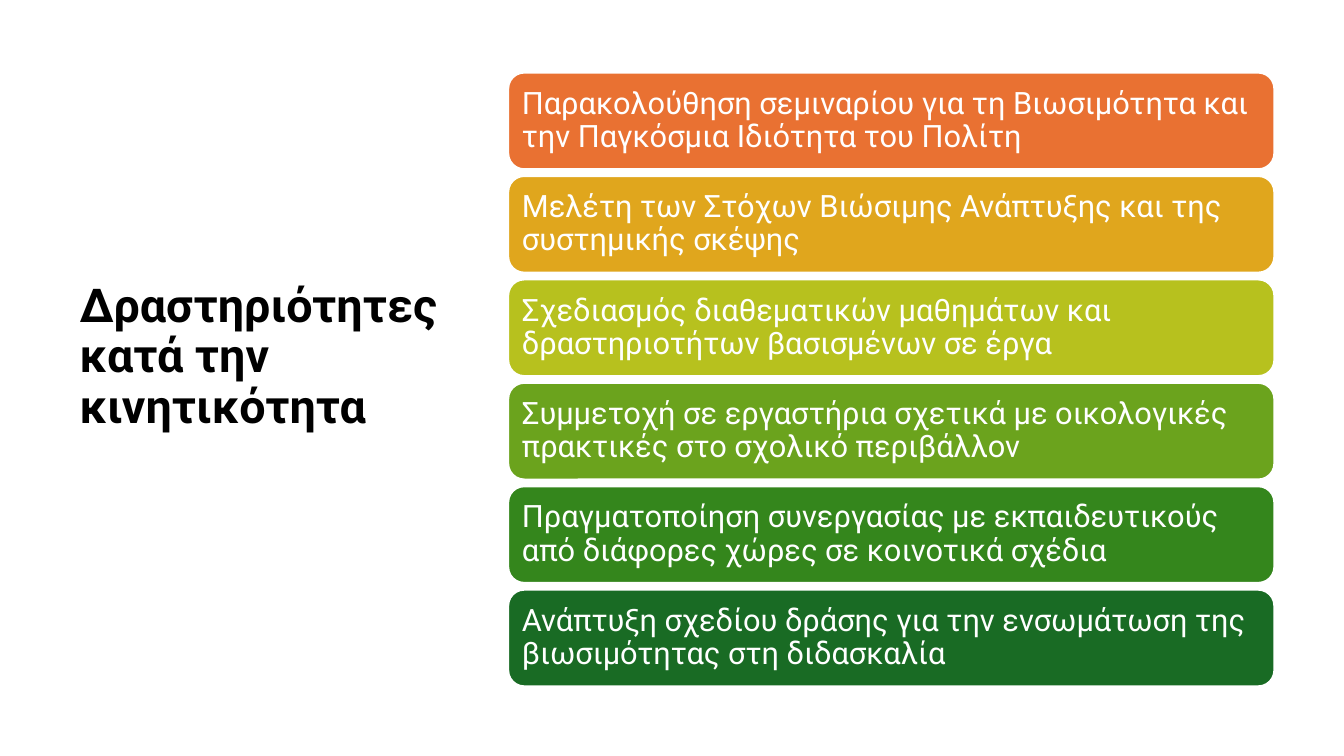
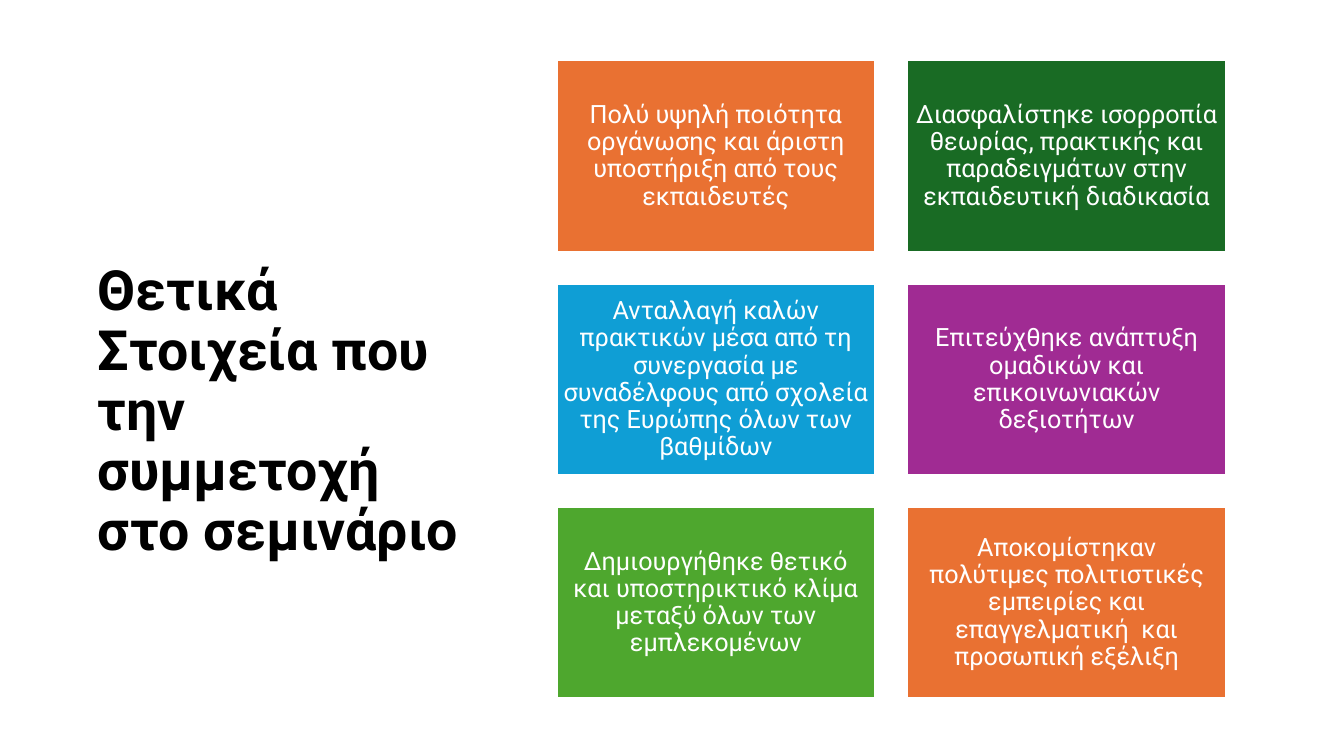
import pptx
import pptx.util
import pptx.dml.color
import pptx.enum.shapes
import pptx.enum.text

Inches = pptx.util.Inches
Pt = pptx.util.Pt
RGBColor = pptx.dml.color.RGBColor
MSO_SHAPE = pptx.enum.shapes.MSO_SHAPE
MSO_ANCHOR = pptx.enum.text.MSO_ANCHOR
PP_ALIGN = pptx.enum.text.PP_ALIGN

# Shared style
FONT = "Roboto"
BLACK = RGBColor(0x00, 0x00, 0x00)
WHITE = RGBColor(0xFF, 0xFF, 0xFF)
ORANGE = RGBColor(0xE9, 0x71, 0x32)
AMBER = RGBColor(0xE0, 0xA6, 0x1D)
LIME = RGBColor(0xB7, 0xC1, 0x1E)
OLIVE = RGBColor(0x6B, 0xA3, 0x1D)
GREEN = RGBColor(0x34, 0x86, 0x1C)
DARK_GREEN = RGBColor(0x19, 0x6B, 0x24)
BLUE = RGBColor(0x0F, 0x9E, 0xD5)
PURPLE = RGBColor(0xA0, 0x2B, 0x93)
LIGHT_GREEN = RGBColor(0x4E, 0xA7, 0x2E)

TITLE_FONT = {"name": FONT, "bold": True, "color": BLACK}
CARD_FONT = {"name": FONT, "bold": False, "color": WHITE}


def write_text(shape, text, font_format, size, anchor, alignment, inset):
    frame = shape.text_frame
    frame_format = {"word_wrap": True, "vertical_anchor": anchor}
    for side in ("left", "right", "top", "bottom"):
        frame_format["margin_" + side] = Inches(inset)
    for name, value in frame_format.items():
        setattr(frame, name, value)
    paragraph = frame.paragraphs[0]
    paragraph.alignment = alignment
    paragraph.line_spacing = 0.9
    run = paragraph.add_run()
    run.text = text
    run.font.size = Pt(size)
    for name, value in font_format.items():
        if name == "color":
            run.font.color.rgb = value
        else:
            setattr(run.font, name, value)


# Content: title, card grid and cards of each slide
SLIDES = [
    {
        "title": "Δραστηριότητες κατά την κινητικότητα",
        "title_box": (0.69, 2.75, 3.82, 2.2),
        "title_size": 33.3,
        "preset": MSO_SHAPE.ROUNDED_RECTANGLE,
        "columns": 1,
        "first": (5.04, 0.72),
        "last": (5.04, 5.85),
        "card_size": (7.6, 0.96),
        "text_size": 22,
        "alignment": PP_ALIGN.LEFT,
        "inset": 0.09,
        "cards": [
            (ORANGE, "Παρακολούθηση σεμιναρίου για τη Βιωσιμότητα και την Παγκόσμια Ιδιότητα του Πολίτη"),
            (AMBER, "Μελέτη των Στόχων Βιώσιμης Ανάπτυξης και της συστημικής σκέψης"),
            (LIME, "Σχεδιασμός διαθεματικών μαθημάτων και δραστηριοτήτων βασισμένων σε έργα"),
            (OLIVE, "Συμμετοχή σε εργαστήρια σχετικά με οικολογικές πρακτικές στο σχολικό περιβάλλον"),
            (GREEN, "Πραγματοποίηση συνεργασίας με εκπαιδευτικούς από διάφορες χώρες σε κοινοτικά σχέδια"),
            (DARK_GREEN, "Ανάπτυξη σχεδίου δράσης για την ενσωμάτωση της βιωσιμότητας στη διδασκαλία"),
        ],
    },
    {
        "title": "Θετικά Στοιχεία που την συμμετοχή στο σεμινάριο",
        "title_box": (0.87, 2.56, 3.82, 2.64),
        "title_size": 39.6,
        "preset": MSO_SHAPE.RECTANGLE,
        "columns": 2,
        "first": (5.52, 0.6),
        "last": (9, 5.03),
        "card_size": (3.16, 1.9),
        "text_size": 18,
        "alignment": PP_ALIGN.CENTER,
        "inset": 0.07,
        "cards": [
            (ORANGE, "Πολύ υψηλή ποιότητα οργάνωσης και άριστη υποστήριξη από τους εκπαιδευτές"),
            (DARK_GREEN, "Διασφαλίστηκε ισορροπία θεωρίας, πρακτικής και παραδειγμάτων στην εκπαιδευτική διαδικασία"),
            (BLUE, "Ανταλλαγή καλών πρακτικών μέσα από τη συνεργασία με συναδέλφους από σχολεία της Ευρώπης όλων των βαθμίδων"),
            (PURPLE, "Επιτεύχθηκε ανάπτυξη ομαδικών και επικοινωνιακών δεξιοτήτων"),
            (LIGHT_GREEN, "Δημιουργήθηκε θετικό και υποστηρικτικό κλίμα μεταξύ όλων των εμπλεκομένων"),
            (ORANGE, "Αποκομίστηκαν πολύτιμες πολιτιστικές εμπειρίες και επαγγελματική  και προσωπική εξέλιξη"),
        ],
    },
]

presentation = pptx.Presentation()
presentation.slide_width = Inches(13.33)
presentation.slide_height = Inches(7.5)

for content in SLIDES:
    slide = presentation.slides.add_slide(presentation.slide_layouts[6])

    # Title on the left
    title = slide.shapes.add_textbox(*[Inches(length) for length in content["title_box"]])
    write_text(title, content["title"], TITLE_FONT, content["title_size"],
               MSO_ANCHOR.TOP, PP_ALIGN.LEFT, 0.05)
    title.text_frame.margin_left = title.text_frame.margin_right = Inches(0.1)

    # Cards, evenly spaced between the first and the last
    columns = content["columns"]
    rows = len(content["cards"]) // columns
    left, top = content["first"]
    last_left, last_top = content["last"]
    column_step = (last_left - left) / max(columns - 1, 1)
    row_step = (last_top - top) / (rows - 1)
    width, height = content["card_size"]
    for index, (color, text) in enumerate(content["cards"]):
        row, column = divmod(index, columns)
        card = slide.shapes.add_shape(
            content["preset"], Inches(left + column * column_step),
            Inches(top + row * row_step), Inches(width), Inches(height))
        card.shadow.inherit = False
        card.fill.solid()
        card.fill.fore_color.rgb = color
        card.line.color.rgb = WHITE
        card.line.width = Pt(1.5)
        write_text(card, text, CARD_FONT, content["text_size"],
                   MSO_ANCHOR.MIDDLE, content["alignment"], content["inset"])

presentation.save("out.pptx")
